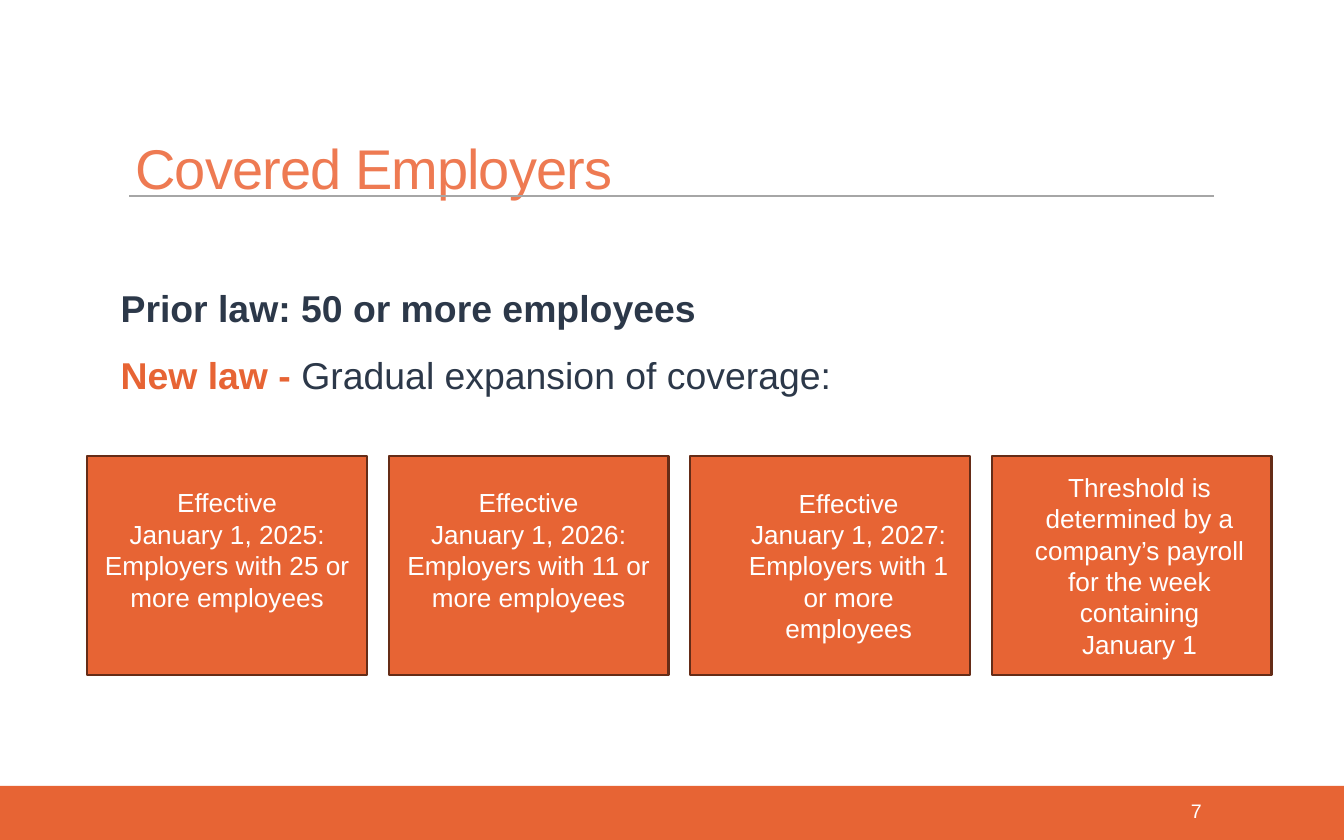
from dataclasses import dataclass
from pptx import Presentation
from pptx.dml.color import RGBColor as Rgb
from pptx.enum import shapes as s, text as t
from pptx.util import Cm, Pt
from lxml import etree

NS = "{http://schemas.openxmlformats.org/drawingml/2006/main}"


@dataclass(frozen=True)
class Theme:
    font: str = "Arial"
    main: str = "E76434"
    head: str = "EE7A52"
    ink: str = "2C3849"
    edge: str = "652C17"
    rule: str = "A6A6A6"
    white: str = "FFFFFF"
    title: float = 30
    body: float = 20
    card: float = 14
    num: float = 10.5


T = Theme()
CARDS = [  # lines, left indent, space held free below the text (cm)
    (["Effective", "January 1, 2025: Employers with 25 or more employees"], 0, 0.6),
    (["Effective", "January 1, 2026:", "Employers with 11 or more employees"], 0, 0.6),
    (["Effective", "January 1, 2027: Employers with 1 or more employees"], 0.7, 0),
    (["Threshold is determined by a company’s payroll for the week containing",
      "January 1"], 0.3, 0),
]


def rgb(hue):
    return Rgb.from_string(hue)


def style(run, size, hue, bold=False):
    font = run.font
    font.name, font.size, font.bold = T.font, Pt(size), bold
    font.color.rgb = rgb(hue)


def setup(frame, left=0.25, top=0.13, low=0.13, anchor=t.MSO_ANCHOR.TOP):
    """Set wrap, anchor and insets (cm) of a text frame."""
    frame.word_wrap = True
    frame.auto_size = t.MSO_AUTO_SIZE.NONE
    frame.vertical_anchor = anchor
    frame.margin_left, frame.margin_right = Cm(left), Cm(0.25)
    frame.margin_top, frame.margin_bottom = Cm(top), Cm(low)


def rect(slide, x, y, w, h, edge=None):
    shape = slide.shapes.add_shape(
        s.MSO_SHAPE.RECTANGLE, Cm(x), Cm(y), Cm(w), Cm(h))
    shape.shadow.inherit = False
    shape.fill.solid()
    shape.fill.fore_color.rgb = rgb(T.main)
    if edge:
        shape.line.color.rgb = rgb(edge)
        shape.line.width = Pt(1.25)
    else:
        shape.line.fill.background()
    return shape


def footer(slide, x, y, w, h):
    rect(slide, x, y, w, h)
    box = slide.shapes.add_textbox(Cm(x + 20.22), Cm(y + 0.05), Cm(2.74), Cm(0.84))
    setup(box.text_frame, anchor=t.MSO_ANCHOR.MIDDLE)
    box.text_frame.text = "7"
    para = box.text_frame.paragraphs[0]
    para.alignment = t.PP_ALIGN.RIGHT
    style(para.runs[0], T.num, T.white)


def header(slide, x, y, w, h):
    title = slide.shapes.title
    title.left, title.top, title.width, title.height = Cm(x), Cm(y), Cm(w), Cm(h)
    setup(title.text_frame, left=0.2, top=0.25, low=0)
    title.text_frame.text = "Covered Employers"
    para = title.text_frame.paragraphs[0]
    para.alignment, para.line_spacing = t.PP_ALIGN.LEFT, 0.85
    style(para.runs[0], T.title, T.head)
    para.runs[0].font._element.set("spc", "-50")

    base = Cm(y + 1.25)
    line = slide.shapes.add_connector(
        s.MSO_CONNECTOR.STRAIGHT, Cm(x + 0.08), base, Cm(x + 20.58), base)
    line.line.color.rgb = rgb(T.rule)
    line.line.width = Pt(1)
    etree.SubElement(line._element.spPr, NS + "effectLst")


def laws(slide, x, y, w, h):
    box = slide.shapes.add_textbox(Cm(x), Cm(y), Cm(w), Cm(h))
    frame = box.text_frame
    setup(frame, left=0.2, top=0.18)
    rows = [
        [("Prior law: 50 or more employees", T.ink, True)],
        [("New law - ", T.main, True),
         ("Gradual expansion of coverage:", T.ink, False)],
    ]
    for i, row in enumerate(rows):
        para = frame.add_paragraph() if i else frame.paragraphs[0]
        para.line_spacing, para.space_after = 0.9, Pt(2)
        para.space_before = Pt(12 if i else 0)
        for words, hue, bold in row:
            run = para.add_run()
            run.text = words
            style(run, T.body, hue, bold)


def cards(slide, x, y, w, h, gap=0.41):
    """Spread the cards evenly over the box."""
    wide = (w - gap * (len(CARDS) - 1)) / len(CARDS)
    for i, (lines, dent, free) in enumerate(CARDS):
        card = rect(slide, x + i * (wide + gap), y, wide, h, T.edge)
        frame = card.text_frame
        setup(frame, low=0.13 + free, anchor=t.MSO_ANCHOR.MIDDLE)
        frame.text = "\n".join(lines)
        for para in frame.paragraphs:
            para.alignment = t.PP_ALIGN.CENTER
            if dent:
                para._p.get_or_add_pPr().set("marL", str(Cm(dent)))
            style(para.runs[0], T.card, T.white)


def main():
    deck = Presentation()
    deck.slide_width, deck.slide_height = Cm(25.4), Cm(15.88)
    slide = deck.slides.add_slide(deck.slide_layouts[5])
    footer(slide, 0, 14.86, 25.4, 1.02)
    header(slide, 2.36, 2.46, 16.18, 0.99)
    laws(slide, 2.08, 5.31, 20.5, 2.95)
    cards(slide, 1.65, 8.62, 22.38, 4.14)
    deck.save("out.pptx")


if __name__ == "__main__":
    main()
